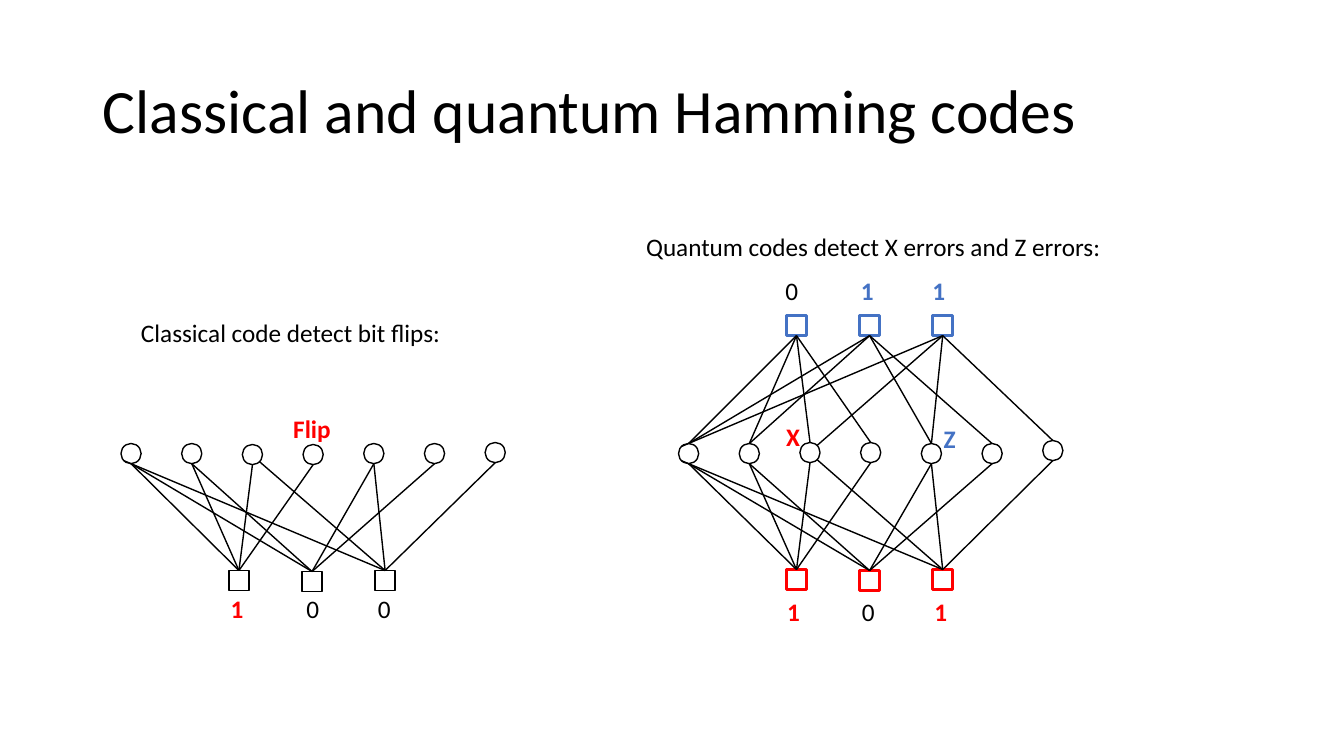
from dataclasses import dataclass
from math import sqrt

from lxml import etree
from pptx import Presentation
from pptx.dml.color import RGBColor
from pptx.enum.shapes import MSO_CONNECTOR, MSO_SHAPE
from pptx.enum.text import MSO_ANCHOR, MSO_AUTO_SIZE, PP_ALIGN
from pptx.oxml.ns import qn
from pptx.shapes.autoshape import Shape
from pptx.slide import Slide
from pptx.text.text import TextFrame
from pptx.util import Inches, Pt

OVAL, SQUARE = MSO_SHAPE.OVAL, MSO_SHAPE.RECTANGLE
STRAIGHT = MSO_CONNECTOR.STRAIGHT
MIDDLE, LEFT = MSO_ANCHOR.MIDDLE, PP_ALIGN.LEFT
GROW, FIXED = MSO_AUTO_SIZE.SHAPE_TO_FIT_TEXT, MSO_AUTO_SIZE.NONE
TOP, BOTTOM = 0, 2


@dataclass(frozen=True)
class Theme:
    font: str = "Calibri"
    title: float = 44
    body: float = 18
    thin: float = 1
    thick: float = 2.25
    black: RGBColor = RGBColor(0, 0, 0)
    white: RGBColor = RGBColor(255, 255, 255)
    red: RGBColor = RGBColor(255, 0, 0)
    blue: RGBColor = RGBColor(0x44, 0x72, 0xC4)


THEME = Theme()

# All places are counted in columns and rows of a square grid.
CELL = Inches(0.1)
MARK = 2
RADIUS = MARK / 2
SLANT = RADIUS / sqrt(2)
BIT_GAP = 6.02
CHECK_GAP = 7.25
CHECK_SHIFT = 10.7

# The bits that each check of the Hamming code covers.
COVER = ((0, 1, 2, 3), (0, 1, 4, 5), (0, 2, 4, 6))
# Edges of the last check meet these bits on a slant, to the left or right.
SLANTED = {0: -SLANT, 2: SLANT}


@dataclass(frozen=True)
class Label:
    text: str
    col: float
    row: float
    width: float = 3.6
    color: RGBColor = THEME.black
    wrap: bool = True


@dataclass(frozen=True)
class Checks:
    rows: tuple[float, ...]
    color: RGBColor
    weight: float
    above: bool = False


@dataclass(frozen=True)
class Code:
    col: float
    rows: tuple[float, ...]
    checks: tuple[Checks, ...]


CODES = (
    Code(12, (44, 44, 44.1, 44.1, 44, 44, 43.9),
         (Checks((56.6, 56.7, 56.6), THEME.black, THEME.thin),)),
    Code(67.3, (44, 44, 43.9, 43.9, 44, 44, 43.7),
         (Checks((31.3, 31.3, 31.3), THEME.blue, THEME.thick, above=True),
          Checks((56.5, 56.6, 56.5), THEME.red, THEME.thick))),
)


def digits(text: str, cols: tuple[float, ...], row: float, accent: RGBColor) -> list[Label]:
    """Label one row of checks; every 1 takes the accent colour."""
    return [Label(digit, col, row, color=accent if digit == "1" else THEME.black)
            for digit, col in zip(text, cols)]


LABELS = [
    Label("Classical code detect bit flips:", 13, 31, 32.1, wrap=False),
    Label("Quantum codes detect X errors and Z errors:", 63.1, 22.5, 47.6, wrap=False),
    Label("Flip", 28.1, 40.5, 6.1, THEME.red),
    Label("X", 77, 41.3, 3.4, THEME.red, False),
    Label("Z", 92.6, 41.5, 3.2, THEME.blue, False),
    *digits("100", (21.9, 29.4, 36.5), 58.4, THEME.red),
    *digits("101", (77.1, 84.5, 91.7), 58.7, THEME.red),
    *digits("011", (76.9, 84.4, 91.5), 26.8, THEME.blue),
]


def grid(*counts: float) -> list[int]:
    return [round(count * CELL) for count in counts]


def write(frame: TextFrame, text: str, *, size: float = THEME.body,
          color: RGBColor = THEME.black, bold: bool = False, wrap: bool = True) -> None:
    frame.word_wrap = wrap
    frame.text = text
    frame.paragraphs[0].alignment = LEFT
    font = frame.paragraphs[0].runs[0].font
    font.name, font.size, font.bold = THEME.font, Pt(size), bold
    font.color.rgb = color


def add_title(slide: Slide, text: str) -> None:
    title = slide.shapes.title
    title.left, title.top, title.width, title.height = grid(9.2, 4, 98.7, 14.5)
    frame = title.text_frame
    write(frame, text, size=THEME.title)
    frame.auto_size = FIXED
    frame.vertical_anchor = MIDDLE
    frame.paragraphs[0].line_spacing = 0.9


def add_label(slide: Slide, label: Label) -> None:
    box = slide.shapes.add_textbox(*grid(label.col, label.row, label.width, 4))
    write(box.text_frame, label.text, color=label.color,
          bold=label.color != THEME.black, wrap=label.wrap)
    box.text_frame.auto_size = GROW


def add_mark(slide: Slide, kind: MSO_SHAPE, col: float, row: float,
             color: RGBColor = THEME.black, weight: float = THEME.thin) -> Shape:
    mark = slide.shapes.add_shape(kind, *grid(col, row, MARK, MARK))
    mark.shadow.inherit = False
    mark.fill.solid()
    mark.fill.fore_color.rgb = THEME.white
    mark.line.color.rgb = color
    mark.line.width = Pt(weight)
    return mark


def add_edge(slide: Slide, check: Shape, side: int, col: float, row: float) -> None:
    """Join one side of a check to a point on the rim of a bit."""
    edge = slide.shapes.add_connector(STRAIGHT, 0, 0, *grid(col, row))
    edge.begin_connect(check, side)
    edge.line.color.rgb = THEME.black
    edge.line.width = Pt(THEME.thin)
    etree.SubElement(edge.element.spPr, qn("a:effectLst"))


def add_checks(slide: Slide, code: Code, checks: Checks) -> None:
    side, sign = (BOTTOM, -1) if checks.above else (TOP, 1)
    for place, (row, cover) in enumerate(zip(checks.rows, COVER)):
        col = code.col + CHECK_SHIFT + place * CHECK_GAP
        check = add_mark(slide, SQUARE, col, row, checks.color, checks.weight)
        slants = SLANTED if place == len(COVER) - 1 else {}
        for bit in cover:
            reach = SLANT if bit in slants else RADIUS
            add_edge(slide, check, side,
                     code.col + bit * BIT_GAP + RADIUS + slants.get(bit, 0),
                     code.rows[bit] + RADIUS + sign * reach)


def add_code(slide: Slide, code: Code) -> None:
    for bit, row in enumerate(code.rows):
        add_mark(slide, OVAL, code.col + bit * BIT_GAP, row)
    for checks in code.checks:
        add_checks(slide, code, checks)


def main() -> None:
    deck = Presentation()
    deck.slide_width, deck.slide_height = Inches(13.33), Inches(7.5)
    slide = deck.slides.add_slide(deck.slide_layouts[5])
    add_title(slide, "Classical and quantum Hamming codes")
    for code in CODES:
        add_code(slide, code)
    for label in LABELS:
        add_label(slide, label)
    deck.save("out.pptx")


if __name__ == "__main__":
    main()
